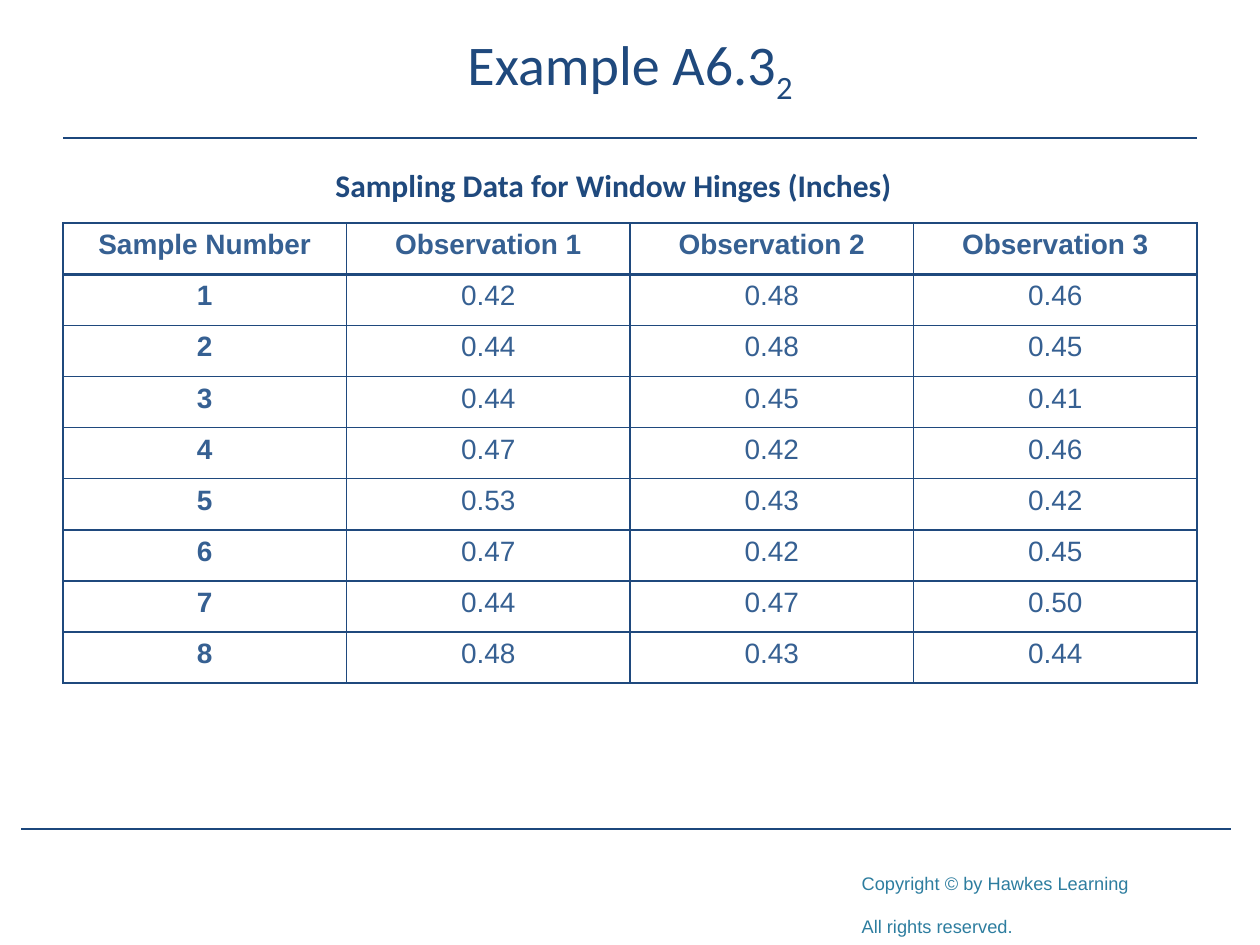
from lxml.etree import SubElement
from pptx import Presentation
from pptx.dml.color import RGBColor
from pptx.enum.shapes import MSO_CONNECTOR
from pptx.enum.text import MSO_ANCHOR, MSO_AUTO_SIZE, PP_ALIGN
from pptx.oxml.ns import qn
from pptx.util import Cm, Pt

COLORS = {
    "rule": "1C477C",
    "heading": "1F497D",
    "cell": "366092",
    "copyright": "2D7D9F",
    "white": "FFFFFF",
}
HEADERS = ["Sample Number", "Observation 1", "Observation 2", "Observation 3"]
SAMPLES = [
    ["0.42", "0.48", "0.46"],
    ["0.44", "0.48", "0.45"],
    ["0.44", "0.45", "0.41"],
    ["0.47", "0.42", "0.46"],
    ["0.53", "0.43", "0.42"],
    ["0.47", "0.42", "0.45"],
    ["0.44", "0.47", "0.50"],
    ["0.48", "0.43", "0.44"],
]
MARGIN = 1.27
CONTENT_WIDTH = 22.86
ROW_HEIGHT = 1.03


def color(name):
    return RGBColor.from_string(COLORS[name])


def style_span(span, font, size, color_name, bold=False, subscript=False):
    span.font.name = font
    span.font.size = Pt(size)
    span.font.color.rgb = color(color_name)
    span.font.bold = bold
    if subscript:
        span._r.get_or_add_rPr().set("baseline", "-25000")


def add_rule(page, left, right, top):
    rule = page.shapes.add_connector(
        MSO_CONNECTOR.STRAIGHT, Cm(left), Cm(top), Cm(right), Cm(top))
    rule.line.color.rgb = color("rule")
    rule.line.width = Pt(1.25)
    SubElement(rule._element.spPr, qn("a:effectLst"))


def add_text(page, left, top, width, height, text):
    box = page.shapes.add_textbox(Cm(left), Cm(top), Cm(width), Cm(height))
    box.text_frame.word_wrap = True
    box.text_frame.text = text
    return box.text_frame


def set_title(page):
    title = page.shapes.title
    title.left, title.top = Cm(MARGIN), Cm(0.33)
    title.width, title.height = Cm(CONTENT_WIDTH), Cm(2.54)
    title.text_frame.auto_size = MSO_AUTO_SIZE.NONE
    title.text_frame.vertical_anchor = MSO_ANCHOR.MIDDLE
    para = title.text_frame.paragraphs[0]
    para.alignment = PP_ALIGN.CENTER
    para.line_spacing = Pt(30)
    for text, subscript in (("Example A6.3", False), ("2", True)):
        span = para.add_run()
        span.text = text
        style_span(span, "Calibri", 32, "heading", subscript=subscript)


def add_caption(page):
    frame = add_text(page, 6.02, 3.23, 12.7, 1.02,
                     "Sampling Data for Window Hinges (Inches)")
    para = frame.paragraphs[0]
    para.alignment = PP_ALIGN.CENTER
    style_span(para.runs[0], "Calibri", 18, "heading", bold=True)


def add_copyright(page):
    frame = add_text(page, 17.12, 16.26, 7.82, 2.74,
                     "Copyright © by Hawkes Learning\nAll rights reserved.")
    frame.margin_top = Cm(0.9)
    for para in frame.paragraphs:
        style_span(para.runs[0], "Arial", 18, "copyright", subscript=True)


def set_borders(cell, widths):
    properties = cell._tc.get_or_add_tcPr()
    for side, width in widths.items():
        line = SubElement(properties, qn(f"a:ln{side}"), w=str(Pt(width)))
        fill = SubElement(line, qn("a:solidFill"))
        SubElement(fill, qn("a:srgbClr"), val=COLORS["heading"])


def fill_cell(cell, text, row, column):
    top, bottom = (2 if row == 1 else 1), (2 if row == 0 else 1)
    set_borders(cell, {"L": 1, "R": 1, "T": top, "B": bottom})
    cell.fill.solid()
    cell.fill.fore_color.rgb = color("white")
    cell.text_frame.text = text
    para = cell.text_frame.paragraphs[0]
    para.alignment = PP_ALIGN.CENTER
    style_span(para.runs[0], "Arial", 16, "cell", bold=row == 0 or column == 0)


def add_sample_table(page):
    rows = [HEADERS] + [[str(number), *values]
                        for number, values in enumerate(SAMPLES, 1)]
    table = page.shapes.add_table(
        len(rows), len(HEADERS), Cm(MARGIN), Cm(4.5),
        Cm(CONTENT_WIDTH), Cm(ROW_HEIGHT * len(rows))).table
    for row, texts in enumerate(rows):
        for column, text in enumerate(texts):
            fill_cell(table.cell(row, column), text, row, column)


def main():
    deck = Presentation()
    deck.slide_width, deck.slide_height = Cm(25.4), Cm(19.05)
    page = deck.slides.add_slide(deck.slide_layouts[5])
    add_copyright(page)
    add_rule(page, MARGIN, MARGIN + CONTENT_WIDTH, 2.79)
    add_rule(page, 0.43, 24.82, 16.71)
    set_title(page)
    add_caption(page)
    add_sample_table(page)
    deck.save("out.pptx")


if __name__ == "__main__":
    main()
